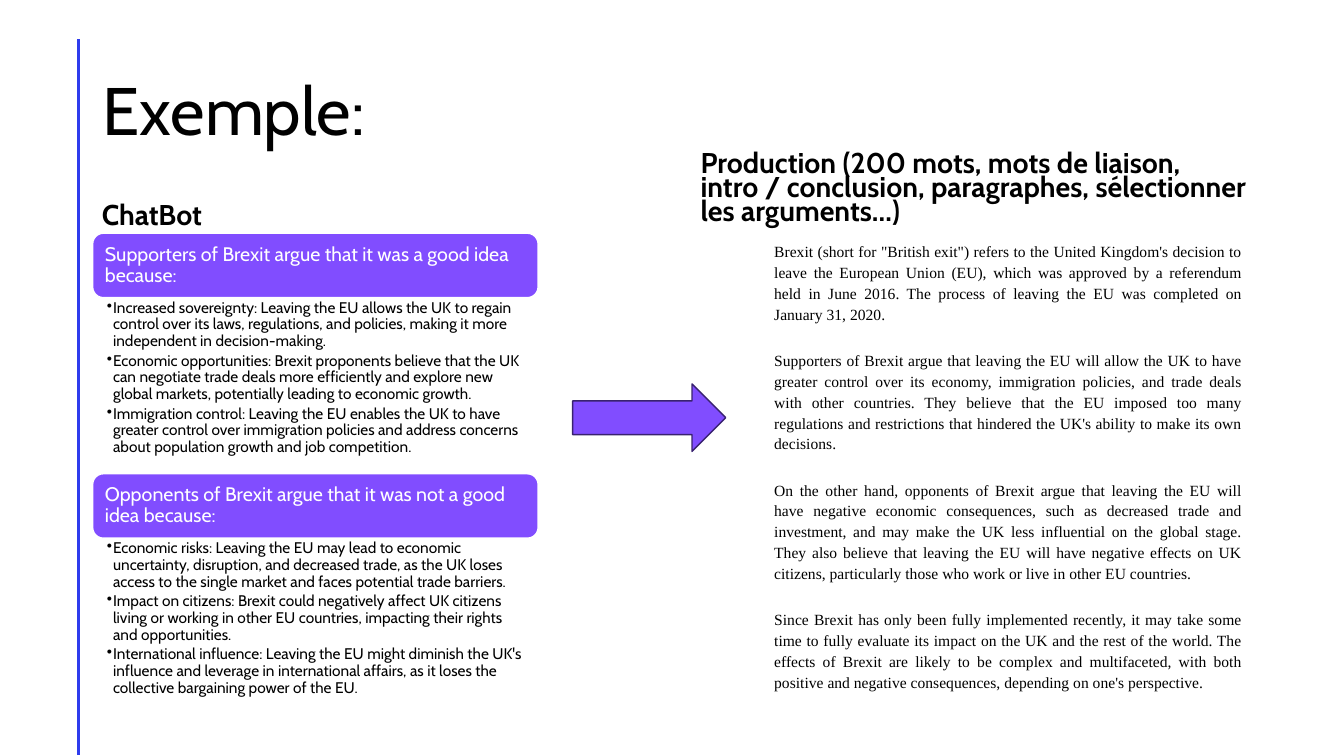
import pptx
import pptx.dml.color
import pptx.enum.shapes
import pptx.enum.text
import pptx.oxml
import pptx.oxml.ns
import pptx.util

Pt = pptx.util.Pt
ANCHOR = pptx.enum.text.MSO_ANCHOR
ALIGN = pptx.enum.text.PP_ALIGN
SHAPE = pptx.enum.shapes.MSO_SHAPE
BLACK, WHITE, PURPLE, DARK_PURPLE, BLUE = "000000", "FFFFFF", "814DFF", "392270", "2F3CED"

SUPPORTERS = [
    "Increased sovereignty: Leaving the EU allows the UK to regain control over its laws, regulations, and policies, making it more independent in decision-making.",
    "Economic opportunities: Brexit proponents believe that the UK can negotiate trade deals more efficiently and explore new global markets, potentially leading to economic growth.",
    "Immigration control: Leaving the EU enables the UK to have greater control over immigration policies and address concerns about population growth and job competition.",
]
OPPONENTS = [
    "Economic risks: Leaving the EU may lead to economic uncertainty, disruption, and decreased trade, as the UK loses access to the single market and faces potential trade barriers.",
    "Impact on citizens: Brexit could negatively affect UK citizens living or working in other EU countries, impacting their rights and opportunities.",
    "International influence: Leaving the EU might diminish the UK's influence and leverage in international affairs, as it loses the collective bargaining power of the EU.",
]
ARGUMENTS = [
    ("Supporters of Brexit argue that it was a good idea because:", SUPPORTERS),
    ("Opponents of Brexit argue that it was not a good idea because:", OPPONENTS),
]
ESSAY = [
    "Brexit (short for \"British exit\") refers to the United Kingdom's decision to leave the European Union (EU), which was approved by a referendum held in June 2016. The process of leaving the EU was completed on January 31, 2020.",
    "Supporters of Brexit argue that leaving the EU will allow the UK to have greater control over its economy, immigration policies, and trade deals with other countries. They believe that the EU imposed too many regulations and restrictions that hindered the UK's ability to make its own decisions.",
    "On the other hand, opponents of Brexit argue that leaving the EU will have negative economic consequences, such as decreased trade and investment, and may make the UK less influential on the global stage. They also believe that leaving the EU will have negative effects on UK citizens, particularly those who work or live in other EU countries.",
    "Since Brexit has only been fully implemented recently, it may take some time to fully evaluate its impact on the UK and the rest of the world. The effects of Brexit are likely to be complex and multifaceted, with both positive and negative consequences, depending on one's perspective.",
]


def color(value):
    return pptx.dml.color.RGBColor.from_string(value)


def set_attributes(target, values):
    for name, value in values.items():
        setattr(target, name, value)


class SlideBuilder:
    font = "Cabin"

    def __init__(self, slide):
        self.slide = slide

    def fill_text(self, shape, texts, size, text_color=BLACK, font=None, bold=False,
                  anchor=ANCHOR.TOP, insets=(7.2, 3.6, 7.2, 3.6), bullet=False,
                  **paragraph_format):
        frame = shape.text_frame
        left, top, right, bottom = insets
        set_attributes(frame, {
            "word_wrap": True, "auto_size": pptx.enum.text.MSO_AUTO_SIZE.NONE,
            "vertical_anchor": anchor, "margin_left": Pt(left), "margin_top": Pt(top),
            "margin_right": Pt(right), "margin_bottom": Pt(bottom)})
        frame.text = "\n".join(texts)
        for paragraph in frame.paragraphs:
            set_attributes(paragraph, {"alignment": ALIGN.LEFT, "space_before": Pt(0),
                                       **paragraph_format})
            for run in paragraph.runs:
                set_attributes(run.font, {"size": Pt(size), "name": font or self.font,
                                          "bold": bold})
                run.font.color.rgb = color(text_color)
            self.set_bullet(paragraph, bullet)

    def set_bullet(self, paragraph, bullet):
        properties = paragraph._p.get_or_add_pPr()
        indent = Pt(4.5) if bullet else 0
        properties.set("marL", str(indent))
        properties.set("indent", str(-indent))
        tag = 'buChar char="•"' if bullet else "buNone"
        properties.append(pptx.oxml.parse_xml(f"<a:{tag} {pptx.oxml.ns.nsdecls('a')}/>"))

    def placeholder(self, index, box, texts, size, **formats):
        shape = self.slide.placeholders[index]
        set_attributes(shape, dict(zip(("left", "top", "width", "height"), map(Pt, box))))
        self.fill_text(shape, texts, size, **formats)

    def text_box(self, box, texts, size, **formats):
        self.fill_text(self.slide.shapes.add_textbox(*map(Pt, box)), texts, size, **formats)

    def shape(self, kind, box, fill, line):
        shape = self.slide.shapes.add_shape(kind, *map(Pt, box))
        shape.shadow.inherit = False
        shape.fill.solid()
        shape.fill.fore_color.rgb = color(fill)
        shape.line.color.rgb = color(line)
        shape.line.width = Pt(1)
        return shape

    def line(self, ends, line_color, width):
        connector = self.slide.shapes.add_connector(
            pptx.enum.shapes.MSO_CONNECTOR.STRAIGHT, *map(Pt, ends))
        connector.line.color.rgb = color(line_color)
        connector.line.width = Pt(width)
        connector._element.spPr.append(
            pptx.oxml.parse_xml(f"<a:effectLst {pptx.oxml.ns.nsdecls('a')}/>"))

    def remove_empty_placeholders(self):
        for shape in list(self.slide.placeholders):
            if not shape.text_frame.text:
                shape._element.getparent().remove(shape._element)


def main():
    presentation = pptx.Presentation()
    presentation.slide_width, presentation.slide_height = Pt(960), Pt(540)
    comparison_layout = presentation.slide_layouts[4]
    builder = SlideBuilder(presentation.slides.add_slide(comparison_layout))

    builder.line((56.2, 28, 56.2, 539.3), BLUE, 2)
    builder.placeholder(0, (66.2, 28.8, 828, 104.4), ["Exemple:"], 48,
                        anchor=ANCHOR.MIDDLE, line_spacing=0.9)
    heading = {"bold": True, "anchor": ANCHOR.BOTTOM, "line_spacing": 0.7,
               "space_before": Pt(10)}
    builder.placeholder(1, (65.5, 103, 406, 64.8), ["ChatBot"], 20.4, **heading)
    builder.placeholder(
        3, (493.2, 100.8, 408.2, 64.8),
        ["Production (200 mots, mots de liaison, intro / conclusion, paragraphes, sélectionner les arguments…)"],
        20.4, **heading)
    builder.placeholder(4, (545.8, 167.8, 348.5, 319.7), ESSAY, 11.1,
                        font="Times New Roman", alignment=ALIGN.JUSTIFY,
                        line_spacing=1.12, space_before=Pt(10), space_after=Pt(8))

    for row, (claim, reasons) in enumerate(ARGUMENTS):
        top = 166.6 + row * 171.8
        card = builder.shape(SHAPE.ROUNDED_RECTANGLE, (66.2, top, 318.2, 46), PURPLE, WHITE)
        builder.fill_text(card, [claim], 14, text_color=WHITE, anchor=ANCHOR.MIDDLE,
                          insets=(6.5, 4.3, 6.5, 4.3), line_spacing=0.9)
        builder.text_box((66.2, top + 46.3, 318.2, 125.3), reasons, 11, bullet=True,
                         insets=(10.1, 1.4, 7.9, 1.4), line_spacing=0.9, space_after=Pt(2.2))

    builder.shape(SHAPE.RIGHT_ARROW, (409, 274.3, 109.4, 48.2), PURPLE, DARK_PURPLE)
    builder.remove_empty_placeholders()
    presentation.save("out.pptx")


if __name__ == "__main__":
    main()
